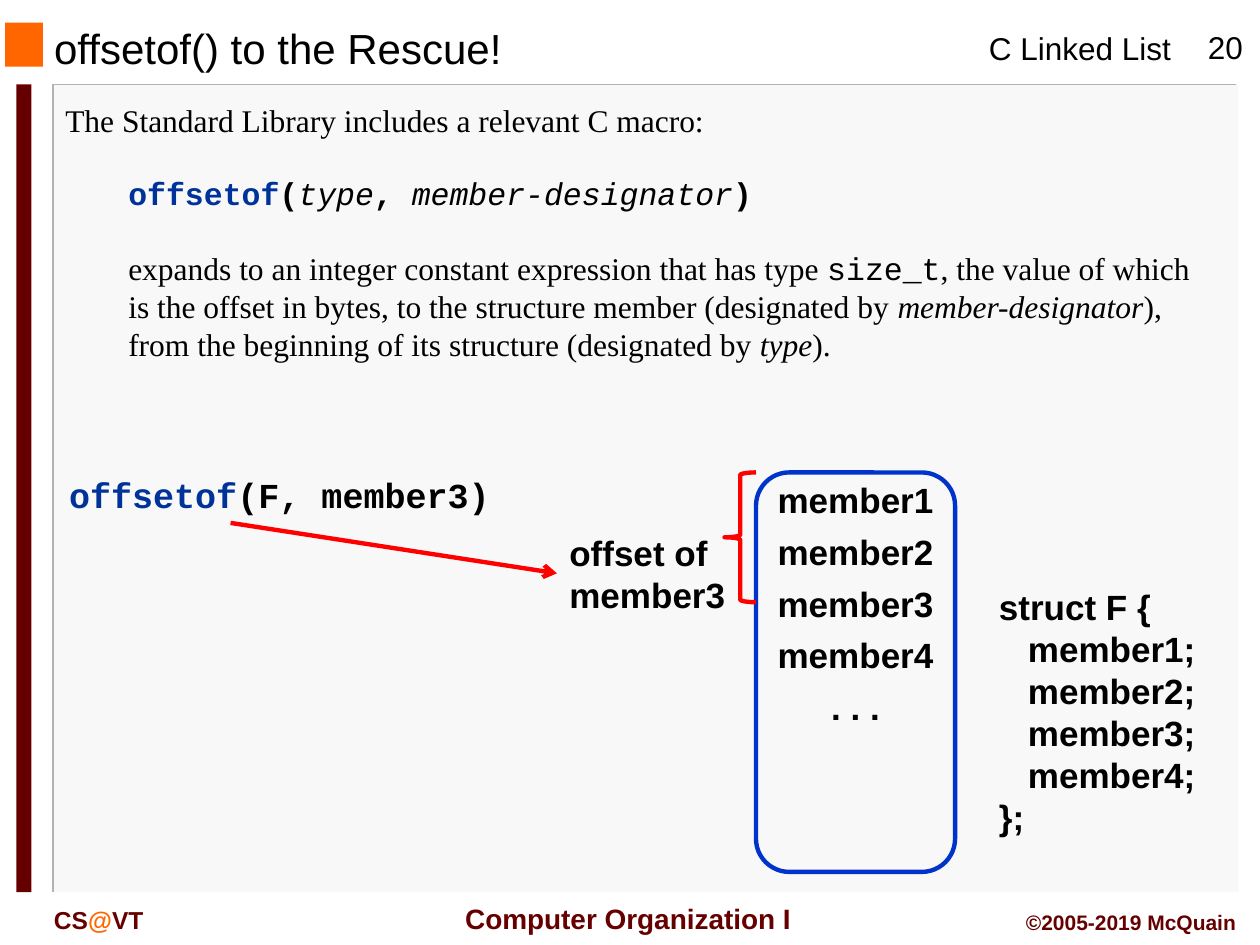
from dataclasses import dataclass

from pptx import Presentation
from pptx import util as u
from pptx.dml.color import RGBColor
from pptx.enum import shapes, text
from pptx.oxml.ns import qn
from lxml import etree


@dataclass(frozen=True)
class Theme:
    black: str = "000000"
    maroon: str = "660000"
    orange: str = "FF6600"
    panel: str = "F8F8F8"
    rule: str = "B2B2B2"
    keyword: str = "003399"
    outline: str = "0033CC"
    accent: str = "FF0000"
    sans: str = "Arial"
    serif: str = "Times New Roman"
    mono: str = "Courier New"
    title: int = 24
    diagram: int = 20
    body: int = 18
    course: int = 16
    dept: int = 14
    credit: int = 12
    stroke: float = 2.5


T = Theme()
LEFT, CENTER, RIGHT = text.PP_ALIGN.LEFT, text.PP_ALIGN.CENTER, text.PP_ALIGN.RIGHT


@dataclass(frozen=True)
class Run:
    text: str
    size: int = T.diagram
    name: str = T.sans
    color: str = T.black
    bold: bool = False
    italic: bool = False


@dataclass(frozen=True)
class Para:
    runs: tuple[Run, ...]
    align: text.PP_ALIGN = LEFT
    before: float = 0
    indent: float = 0


@dataclass(frozen=True)
class Box:
    x: float
    y: float
    w: float
    h: float

    def lengths(self) -> tuple[u.Length, ...]:
        return tuple(u.Inches(v) for v in (self.x, self.y, self.w, self.h))


@dataclass(frozen=True)
class Label:
    box: Box
    paras: tuple[Para, ...]
    wrap: bool = True


def label(box: Box, *runs: Run, align: text.PP_ALIGN = LEFT, wrap: bool = True) -> Label:
    """One-paragraph label."""
    return Label(box, (Para(runs, align),), wrap)


def write(tf, paras: tuple[Para, ...]) -> None:
    for i, para in enumerate(paras):
        p = tf.paragraphs[0] if i == 0 else tf.add_paragraph()
        p.alignment = para.align
        p.space_before = u.Pt(para.before)
        if para.indent:
            p._p.get_or_add_pPr().set("marL", str(u.Inches(para.indent)))
        for run in para.runs:
            r = p.add_run()
            r.text = run.text
            fmt = {"size": u.Pt(run.size), "name": run.name,
                   "bold": run.bold, "italic": run.italic}
            for key, value in fmt.items():
                setattr(r.font, key, value)
            r.font.color.rgb = RGBColor.from_string(run.color)


def draw_label(s, item: Label) -> None:
    tf = s.shapes.add_textbox(*item.box.lengths()).text_frame
    tf.word_wrap = item.wrap
    write(tf, item.paras)


def draw_shape(s, kind, box: Box, fill: str = "", line: str = "") -> None:
    sp = s.shapes.add_shape(kind, *box.lengths())
    sp.shadow.inherit = False
    if fill:
        sp.fill.solid()
        sp.fill.fore_color.rgb = RGBColor.from_string(fill)
    else:
        sp.fill.background()
    if line:
        sp.line.color.rgb = RGBColor.from_string(line)
        sp.line.width = u.Pt(T.stroke)
    else:
        sp.line.fill.background()


def draw_corner(s, points: list[tuple[float, float]], color: str) -> None:
    """Open outline along two sides of the panel."""
    start, *rest = [(u.Inches(x), u.Inches(y)) for x, y in points]
    builder = s.shapes.build_freeform(*start)
    builder.add_line_segments(rest, close=False)
    sp = builder.convert_to_shape()
    sp.shadow.inherit = False
    sp.fill.background()
    sp.line.color.rgb = RGBColor.from_string(color)
    sp.line.width = u.Pt(1)


def draw_arrow(s, x1: float, y1: float, x2: float, y2: float) -> None:
    ends = [u.Inches(v) for v in (x1, y1, x2, y2)]
    c = s.shapes.add_connector(shapes.MSO_CONNECTOR.STRAIGHT, *ends)
    c.line.color.rgb = RGBColor.from_string(T.accent)
    c.line.width = u.Pt(T.stroke)
    etree.SubElement(c.line._get_or_add_ln(), qn("a:tailEnd"), type="arrow")
    etree.SubElement(c._element.spPr, qn("a:effectLst"))


def bold(words: str, **style) -> Run:
    return Run(words, bold=True, **style)


def code(words: str, **style) -> Run:
    return Run(words, T.body, T.mono, **style)


def prose(words: str, **style) -> Run:
    return Run(words, T.body, T.serif, **style)


MACRO = Para((code("offsetof", color=T.keyword, bold=True), code("(", bold=True),
              code("type", italic=True), code(", ", bold=True),
              code("member-designator", italic=True), code(")", bold=True)))
MEANING = Para((
    prose("expands to an integer constant expression that has type "), code("size_t"),
    prose(", the value of which is the offset in bytes, to the structure member (designated by "),
    prose("member-designator", italic=True),
    prose("), from the beginning of its structure (designated by "),
    prose("type", italic=True), prose(").")), before=21.5)

MEMBERS = [f"member{n}" for n in range(1, 5)]
STRUCT = (Para((bold("struct F {"),)),
          *(Para((bold(f"{m};"),), indent=0.23) for m in MEMBERS),
          Para((bold("};"),)))
RECORD = Box(6, 3.75, 1.58, 3.17)
ROW_PITCH = 0.41

DEPT = {"size": T.dept, "color": T.maroon}
LABELS = [
    label(Box(7.75, 0.18, 1.66, 0.4), Run("C Linked List", T.body), wrap=False),
    label(Box(9.39, 0.17, 0.67, 0.4), Run("20", T.body), align=CENTER),
    label(Box(0.33, 7.13, 1.5, 0.33), bold("CS", **DEPT),
          bold("@", size=T.dept, color=T.orange), bold("VT", **DEPT)),
    label(Box(3.53, 7.11, 2.91, 0.37),
          bold("Computer Organization I", size=T.course, color=T.maroon), align=CENTER),
    label(Box(7.83, 7.17, 2.08, 0.3),
          bold("©2005-2019 McQuain", size=T.credit, color=T.maroon), align=RIGHT),
    label(Box(0.42, 0.75, 9.17, 0.4),
          prose("The Standard Library includes a relevant C macro:")),
    Label(Box(0.92, 1.33, 8.67, 1.62), (MACRO, MEANING)),
    label(Box(0.45, 3.71, 4, 0.44), bold("offsetof", name=T.mono, color=T.keyword),
          bold("(F, member3)", name=T.mono)),
    label(Box(4.42, 4.17, 1.58, 0.77), bold("offset of member3")),
    Label(Box(7.83, 4.6, 2, 2.12), STRUCT),
    *(label(Box(RECORD.x, 3.75 + i * ROW_PITCH, RECORD.w, 0.44), bold(row), align=CENTER)
      for i, row in enumerate([*MEMBERS, ". . ."])),
]


def main() -> None:
    prs = Presentation()
    prs.slide_width, prs.slide_height = u.Inches(10), u.Inches(7.5)
    s = prs.slides.add_slide(prs.slide_layouts[5])
    kind = shapes.MSO_SHAPE

    draw_shape(s, kind.RECTANGLE, Box(0.43, 0.67, 9.4, 6.41), fill=T.panel)
    draw_corner(s, [(9.81, 0.67), (0.42, 0.67), (0.42, 7.08)], T.rule)
    draw_shape(s, kind.RECTANGLE, Box(0.04, 0.18, 0.3, 0.35), fill=T.orange)
    draw_shape(s, kind.RECTANGLE, Box(0.13, 0.67, 0.12, 6.41), fill=T.maroon)

    title = s.shapes.title
    for key, value in zip(("left", "top", "width", "height"),
                          Box(0.33, 0.19, 6.33, 0.38).lengths()):
        setattr(title, key, value)
    tf = title.text_frame
    tf.auto_size = text.MSO_AUTO_SIZE.NONE
    tf.vertical_anchor = text.MSO_ANCHOR.MIDDLE
    write(tf, (Para((Run("offsetof() to the Rescue!", T.title),)),))

    draw_shape(s, kind.ROUNDED_RECTANGLE, RECORD, line=T.outline)
    for item in LABELS:
        draw_label(s, item)
    draw_shape(s, kind.LEFT_BRACE, Box(5.75, 3.75, 0.25, 1.03), line=T.accent)
    draw_arrow(s, 1.83, 4.15, 4.42, 4.55)
    prs.save("out.pptx")


if __name__ == "__main__":
    main()
